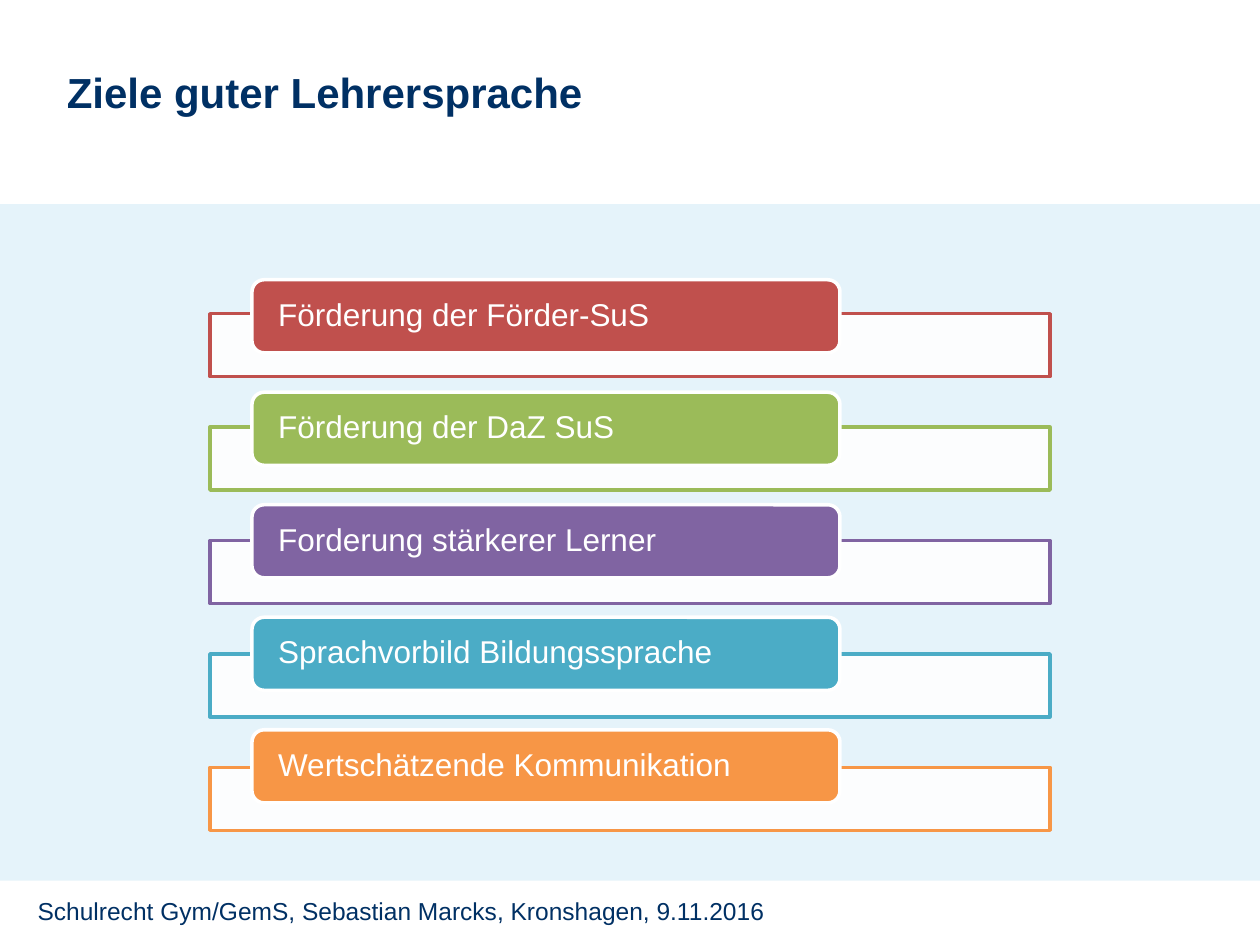
import dataclasses

import pptx
import pptx.dml.color
import pptx.enum.shapes
import pptx.enum.text
import pptx.oxml
import pptx.oxml.ns
import pptx.util

SHAPE = pptx.enum.shapes.MSO_SHAPE
ANCHOR = pptx.enum.text.MSO_ANCHOR
ALIGN = pptx.enum.text.PP_ALIGN
COLUMNS, ROWS = 100, 75


@dataclasses.dataclass(frozen=True)
class Theme:
    font: str = "Arial"
    navy: str = "003064"
    sky: str = "008CCF"
    white: str = "FFFFFF"
    accents: tuple = ("C0504D", "9BBB59", "8064A2", "4BACC6", "F79646")
    title_size: int = 24
    goal_size: int = 18
    footer_size: int = 14
    outline: int = 2


def rgb(code):
    return pptx.dml.color.RGBColor.from_string(code)


def write(frame, text, *, font, size, color, bold=False, anchor=ANCHOR.TOP,
          insets=(0.1, 0.05), line_spacing=None):
    frame.word_wrap = True
    frame.auto_size = pptx.enum.text.MSO_AUTO_SIZE.NONE
    frame.vertical_anchor = anchor
    side, edge = (pptx.util.Inches(inset) for inset in insets)
    frame.margin_left = frame.margin_right = side
    frame.margin_top = frame.margin_bottom = edge
    paragraph = frame.paragraphs[0]
    paragraph.alignment = ALIGN.LEFT
    paragraph.line_spacing = line_spacing
    run = paragraph.add_run()
    run.text = text
    run.font.name = font
    run.font.size = pptx.util.Pt(size)
    run.font.bold = bold
    run.font.color.rgb = rgb(color)


class SlideBuilder:
    def __init__(self, deck, theme):
        self.theme = theme
        self.column = deck.slide_width / COLUMNS
        self.row = deck.slide_height / ROWS
        self.slide = deck.slides.add_slide(deck.slide_layouts[5])

    def area(self, left, top, columns, rows):
        return (round(left * self.column), round(top * self.row),
                round(columns * self.column), round(rows * self.row))

    def title(self, text, *place):
        heading = self.slide.shapes.title
        heading.left, heading.top, heading.width, heading.height = self.area(*place)
        write(heading.text_frame, text, font=self.theme.font,
              size=self.theme.title_size, color=self.theme.navy, bold=True)

    def footer(self, text, *place):
        note = self.slide.shapes.add_textbox(*self.area(*place))
        write(note.text_frame, text, font=self.theme.font,
              size=self.theme.footer_size, color=self.theme.navy)

    def block(self, kind, *place, fill, line=None, opacity=100):
        block = self.slide.shapes.add_shape(kind, *self.area(*place))
        block.shadow.inherit = False
        block.fill.solid()
        block.fill.fore_color.rgb = rgb(fill)
        if opacity < 100:
            color = block.fill._xPr.find(".//" + pptx.oxml.ns.qn("a:srgbClr"))
            alpha = pptx.oxml.parse_xml(
                f'<a:alpha {pptx.oxml.ns.nsdecls("a")} val="{opacity * 1000}"/>')
            color.append(alpha)
        if line:
            block.line.color.rgb = rgb(line)
            block.line.width = pptx.util.Pt(self.theme.outline)
        else:
            block.line.fill.background()
        return block

    def goal(self, text, accent, frame_top, label_top):
        white = self.theme.white
        self.block(SHAPE.RECTANGLE, 16.67, frame_top, 66.67, 5,
                   fill=white, line=accent, opacity=90)
        label = self.block(SHAPE.ROUNDED_RECTANGLE, 20, label_top, 46.67, 5.8,
                           fill=accent, line=white)
        write(label.text_frame, text, font=self.theme.font,
              size=self.theme.goal_size, color=white, anchor=ANCHOR.MIDDLE,
              insets=(0.18, 0), line_spacing=0.9)


def main():
    deck = pptx.Presentation()
    deck.slide_width = pptx.util.Inches(10)
    deck.slide_height = pptx.util.Inches(7.5)
    theme = Theme()
    builder = SlideBuilder(deck, theme)
    builder.block(SHAPE.RECTANGLE, 0, 16.2, COLUMNS, 53.7, fill=theme.sky, opacity=10)
    builder.footer("Schulrecht Gym/GemS, Sebastian Marcks, Kronshagen, 9.11.2016",
                   2, 70.6, 85.8, 5.2)
    builder.title("Ziele guter Lehrersprache", 4.3, 4.8, 59.9, 5)
    goals = (
        "Förderung der Förder-SuS",
        "Förderung der DaZ SuS",
        "Forderung stärkerer Lerner",
        "Sprachvorbild Bildungssprache",
        "Wertschätzende Kommunikation",
    )
    for index, (goal, accent) in enumerate(zip(goals, theme.accents)):
        builder.goal(goal, accent, 24.9 + 9 * index, 22.2 + 8.93 * index)
    deck.save("out.pptx")


if __name__ == "__main__":
    main()
